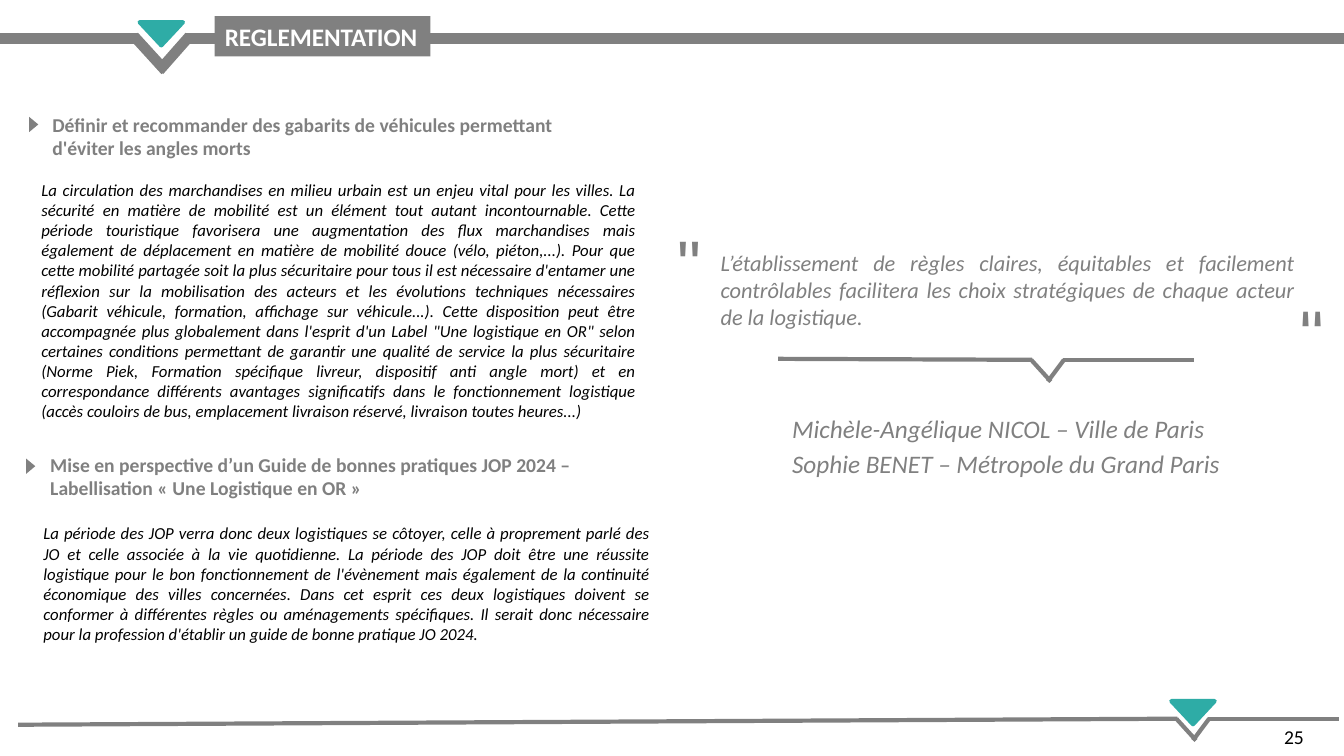
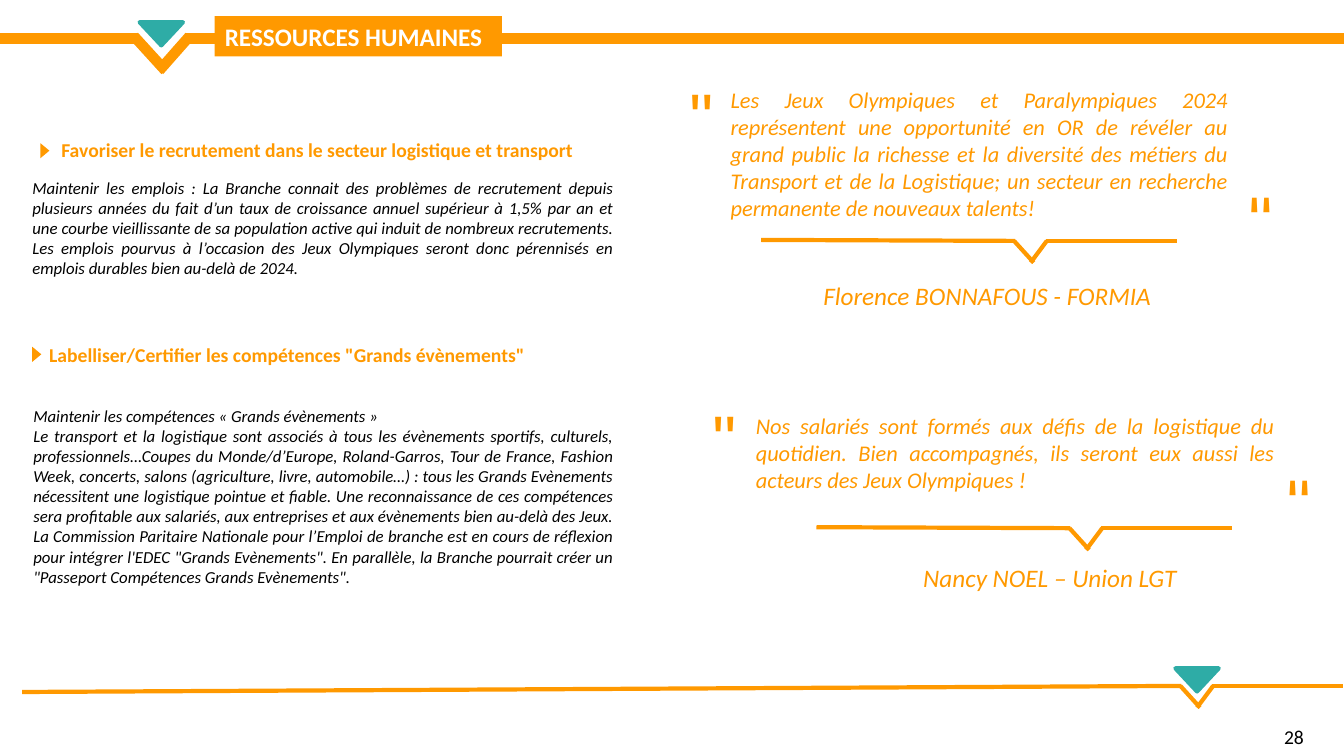
"""Build two themed recommendation slides with headings, explanations and quotes."""
from lxml.etree import SubElement
from pptx import Presentation
from pptx.dml.color import RGBColor
from pptx.enum.shapes import MSO_CONNECTOR, MSO_SHAPE
from pptx.enum.text import MSO_ANCHOR, MSO_AUTO_SIZE, PP_ALIGN
from pptx.oxml.ns import qn
from pptx.util import Inches, Pt

GRAY = RGBColor(0x80, 0x80, 0x80)
ORANGE = RGBColor(0xFF, 0x99, 0x00)
TEAL = RGBColor(0x2E, 0xAC, 0xA6)
BLACK = RGBColor(0x00, 0x00, 0x00)
WHITE = RGBColor(0xFF, 0xFF, 0xFF)

CELL = Inches(0.1)
COLUMNS, ROWS = 133.33, 75
TWO_CONTENT_LAYOUT = 3


def grid(*cells):
    """Convert numbers of grid cells to lengths."""
    return [round(cell * CELL) for cell in cells]


def write(frame, text, size=12, color=BLACK, bold=False, italic=False,
          font="Calibri", align=PP_ALIGN.LEFT):
    """Fill a text frame, one paragraph per line of text."""
    frame.word_wrap = True
    frame.auto_size = MSO_AUTO_SIZE.NONE
    frame.vertical_anchor = MSO_ANCHOR.TOP
    for index, line in enumerate(text.split("\n")):
        paragraph = frame.add_paragraph() if index else frame.paragraphs[0]
        properties = paragraph._p.get_or_add_pPr()
        properties.set("marL", "0")
        properties.set("indent", "0")
        SubElement(properties, qn("a:buNone"))
        paragraph.space_before = Pt(0)
        paragraph.alignment = align
        run = paragraph.add_run()
        run.text = line
        run.font.name = font
        run.font.size = Pt(size)
        run.font.bold = bold
        run.font.italic = italic
        run.font.color.rgb = color


class Deck:
    """Hold the shared style and the slide being built."""

    def __init__(self):
        """Start an empty wide presentation."""
        self.presentation = Presentation()
        self.presentation.slide_width, self.presentation.slide_height = grid(COLUMNS, ROWS)

    def start(self, title, title_width, accent, number, notch, row):
        """Add a slide with its header band, title, footer line and number."""
        layout = self.presentation.slide_layouts[TWO_CONTENT_LAYOUT]
        self.slide = self.presentation.slides.add_slide(layout)
        self.accent = accent
        self.bodies = iter(list(self.slide.placeholders)[1:])
        self.line(COLUMNS, 3.8, 18.5, 3.8, 7.5)
        self.line(13.3, 3.6, 16.4, 7, 7.5)
        self.line(13.7, 3.8, 0, 3.8, 7.5)
        self.line(18.8, 3.6, 15.8, 7, 7.5)
        self.teal_triangle(13.85, 2.2)
        self.title(title, title_width)
        self.notched_line(notch, row, 114.9, 0.6)
        self.teal_triangle(notch - 0.5, row - 1.75)
        self.text(str(number), 126.4, 71.4, 5.3, 3.4, size=14)

    def place(self, shape, left, top, width, height):
        """Move a placeholder and bring it to the front."""
        shape.left, shape.top, shape.width, shape.height = grid(left, top, width, height)
        self.slide.shapes._spTree.append(shape._element)

    def title(self, text, width):
        """Put the title on its coloured label."""
        title = self.slide.shapes.title
        self.place(title, 21.3, 1.6, width, 4)
        title.fill.solid()
        title.fill.fore_color.rgb = self.accent
        write(title.text_frame, text, size=18, color=WHITE, bold=True)

    def body(self, text, left, top, width, height):
        """Fill the next body placeholder with a justified explanation."""
        body = next(self.bodies)
        self.place(body, left, top, width, height)
        write(body.text_frame, text, italic=True, align=PP_ALIGN.JUSTIFY)

    def text(self, text, left, top, width, height, rotation=0, **style):
        """Add a text box."""
        box = self.slide.shapes.add_textbox(*grid(left, top, width, height))
        box.rotation = rotation
        write(box.text_frame, text, **style)

    def line(self, left, top, right, bottom, width=3):
        """Add a straight accent line."""
        connector = self.slide.shapes.add_connector(
            MSO_CONNECTOR.STRAIGHT, *grid(left, top, right, bottom))
        connector.line.color.rgb = self.accent
        connector.line.width = Pt(width)
        SubElement(connector._element.spPr, qn("a:effectLst"))

    def notched_line(self, notch, row, run, drop):
        """Draw a line with a V notch; run and drop place its left end."""
        self.line(notch - run, row + drop, notch + 0.1, row)
        self.line(notch, row, notch + 1.95, row + 2.15)
        self.line(notch + 3.25, row, notch + 1.65, row + 2.15)
        self.line(notch + 3.15, row, notch + 16.15, row)

    def triangle(self, left, top, width, height, rotation, color):
        """Add a plain turned triangle."""
        shape = self.slide.shapes.add_shape(
            MSO_SHAPE.ISOSCELES_TRIANGLE, *grid(left, top, width, height))
        shape.rotation = rotation
        shape.shadow.inherit = False
        shape.fill.solid()
        shape.fill.fore_color.rgb = color
        shape.line.fill.background()
        return shape

    def teal_triangle(self, left, top):
        """Add the teal triangle that sits in a notch."""
        shape = self.triangle(left, top, 4.3, 2.3, 180, TEAL)
        shape.line.color.rgb = TEAL
        shape.line.width = Pt(3)

    def heading(self, text, left, top, width, height, marker):
        """Add a bold heading with its arrow marker at (left, top)."""
        self.triangle(*marker, 1.5, 0.9, 90, self.accent)
        self.text(text, left, top, width, height, size=14, color=self.accent, bold=True)

    def quote(self, text, area, opening, closing, notch, row):
        """Add a quote between two marks, above a notched line."""
        for corner, rotation in ((opening, 0), (closing, 180)):
            self.text('"', *corner, 8.7, 9.1, rotation, size=48,
                      color=self.accent, font="Arial")
        self.text(text, *area, size=16, color=self.accent, italic=True,
                  align=PP_ALIGN.JUSTIFY)
        self.notched_line(notch, row, 25.1, -0.1)

    def authors(self, names, left, top, width):
        """List the people quoted, one per row."""
        for index, name in enumerate(names):
            self.text(name, left, top + 3.5 * index, width, 4, size=18,
                      color=self.accent, italic=True)


def build_regulation(deck):
    """Build the regulation slide."""
    deck.start("REGLEMENTATION", 21.4, GRAY, 25, notch=116.7, row=71.3)
    deck.heading("Définir et recommander des gabarits de véhicules permettant "
                 "d'éviter les angles morts", 4.2, 10.7, 57.1, 5.7, (2.6, 11.9))
    sentences = [
        "La circulation des marchandises en milieu urbain est un enjeu vital pour les villes.",
        "La sécurité en matière de mobilité est un élément tout autant incontournable.",
        "Cette période touristique favorisera une augmentation des flux marchandises mais "
        "également de déplacement en matière de mobilité douce (vélo, piéton,...).",
        "Pour que cette mobilité partagée soit la plus sécuritaire pour tous il est nécessaire "
        "d'entamer une réflexion sur la mobilisation des acteurs et les évolutions techniques "
        "nécessaires (Gabarit véhicule, formation, affichage sur véhicule...).",
        "Cette disposition peut être accompagnée plus globalement dans l'esprit d'un Label "
        "\"Une logistique en OR\" selon certaines conditions permettant de garantir une qualité "
        "de service la plus sécuritaire (Norme Piek, Formation spécifique livreur, dispositif "
        "anti angle mort) et en correspondance différents avantages significatifs dans le "
        "fonctionnement logistique (accès couloirs de bus, emplacement livraison réservé, "
        "livraison toutes heures...)",
    ]
    deck.body(" ".join(sentences), 3.1, 17.3, 61, 25.2)
    deck.heading("Mise en perspective d’un Guide de bonnes pratiques JOP 2024 – "
                 "Labellisation « Une Logistique en OR »", 4, 44.4, 62.2, 5.7, (2.3, 45.8))
    deck.body(
        "La période des JOP verra donc deux logistiques se côtoyer, celle à proprement parlé des "
        "JO et celle associée à la vie quotidienne. La période des JOP doit être une réussite "
        "logistique pour le bon fonctionnement de l'évènement mais également de la continuité "
        "économique des villes concernées. Dans cet esprit ces deux logistiques doivent se "
        "conformer à différentes règles ou aménagements spécifiques. Il serait donc nécessaire "
        "pour la profession d'établir un guide de bonne pratique JO 2024.",
        3.3, 51.4, 62.2, 13.1)
    deck.quote("L’établissement de règles claires, équitables et facilement contrôlables "
               "facilitera les choix stratégiques de chaque acteur de la logistique.",
               (70.5, 24.2, 58.9, 9.1), (66.2, 21.5), (123.6, 25.9), notch=102.3, row=35.7)
    deck.authors(["Michèle-Angélique NICOL – Ville de Paris",
                  "Sophie BENET – Métropole du Grand Paris"], 77.6, 40.5, 47.6)


def build_human_resources(deck):
    """Build the human resources slide."""
    deck.start("RESSOURCES HUMAINES", 28.5, ORANGE, 28, notch=117.1, row=68.05)
    deck.heading("Favoriser le recrutement dans le secteur logistique et transport",
                 5.1, 13.2, 57.6, 3.4, (3.7, 14.5))
    deck.body(
        "Maintenir les emplois : La Branche connait des problèmes de recrutement depuis "
        "plusieurs années du fait d’un taux de croissance annuel supérieur à 1,5% par an et une "
        "courbe vieillissante de sa population active qui induit de nombreux recrutements. Les "
        "emplois pourvus à l’occasion des Jeux Olympiques seront donc pérennisés en emplois "
        "durables bien au-delà de 2024.",
        2.2, 17.1, 59.7, 11.1)
    deck.heading("Labelliser/Certifier les compétences \"Grands évènements\"",
                 3.9, 33.5, 50.3, 3.4, (2.9, 34.7))
    deck.body(
        "Maintenir les compétences « Grands évènements »\n"
        "Le transport et la logistique sont associés à tous les évènements sportifs, culturels, "
        "professionnels…Coupes du Monde/d’Europe, Roland-Garros, Tour de France, Fashion Week, "
        "concerts, salons (agriculture, livre, automobile…) : tous les Grands Evènements "
        "nécessitent une logistique pointue et fiable. Une reconnaissance de ces compétences "
        "sera profitable aux salariés, aux entreprises et aux évènements bien au-delà des Jeux. "
        "La Commission Paritaire Nationale pour l’Emploi de branche est en cours de réflexion "
        "pour intégrer l'EDEC \"Grands Evènements\". En parallèle, la Branche pourrait créer un "
        "\"Passeport Compétences Grands Evènements\".",
        2.3, 39.7, 59.6, 19.2)
    deck.quote("Les Jeux Olympiques et Paralympiques 2024 représentent une opportunité en OR de "
               "révéler au grand public la richesse et la diversité des métiers du Transport et "
               "de la Logistique; un secteur en recherche permanente de nouveaux talents!",
               (71.5, 8.1, 51.3, 14.5), (67.4, 6.9), (118.5, 14.6), notch=100.6, row=23.9)
    deck.authors(["Florence BONNAFOUS - FORMIA"], 80.7, 27.3, 43.7)
    deck.quote("Nos salariés sont formés aux défis de la logistique du quotidien. Bien "
               "accompagnés, ils seront eux aussi les acteurs des Jeux Olympiques !",
               (74, 40.4, 53.4, 9.1), (69.7, 38.8), (122.3, 42.7), notch=106.1, row=52.4)
    deck.authors(["Nancy NOEL – Union LGT"], 90.6, 55.3, 33.5)


def main():
    """Build and save the presentation."""
    deck = Deck()
    build_regulation(deck)
    build_human_resources(deck)
    deck.presentation.save("out.pptx")


if __name__ == "__main__":
    main()
